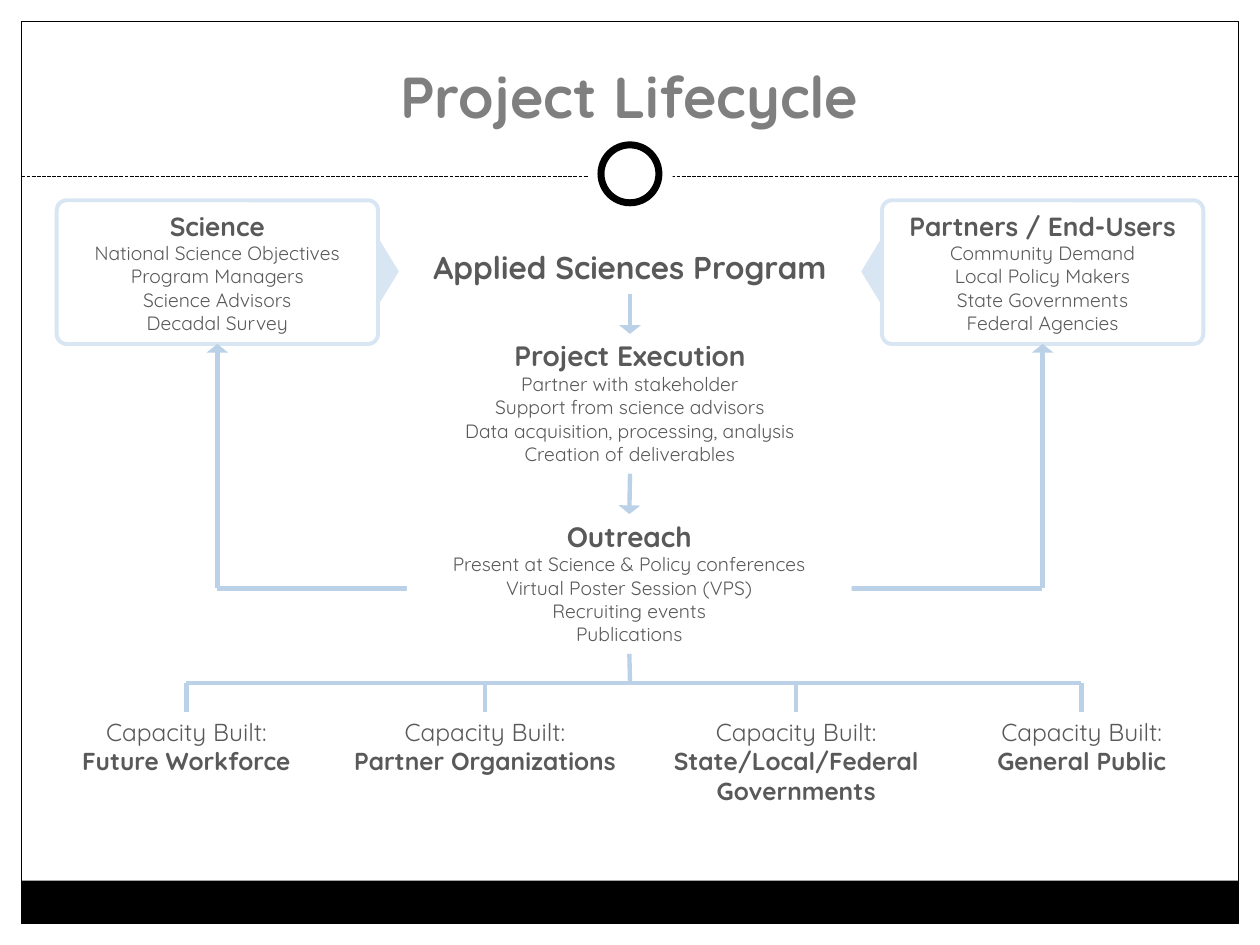
from lxml.etree import SubElement
from pptx import Presentation
from pptx.dml.color import RGBColor
from pptx.enum.dml import MSO_LINE
from pptx.enum.shapes import MSO_CONNECTOR, MSO_SHAPE
from pptx.enum.text import MSO_ANCHOR, MSO_AUTO_SIZE, PP_ALIGN
from pptx.oxml.ns import qn
from pptx.util import Inches, Pt

BLACK = RGBColor(0x00, 0x00, 0x00)
WHITE = RGBColor(0xFF, 0xFF, 0xFF)
TITLE_GREY = RGBColor(0x7F, 0x7F, 0x7F)
TEXT_GREY = RGBColor(0x59, 0x59, 0x59)
LINE_BLUE = RGBColor(0xBA, 0xD1, 0xE8)
PALE_BLUE = RGBColor(0xD8, 0xE5, 0xF2)
FONT = "Quicksand"

prs = Presentation()
prs.slide_width, prs.slide_height = Inches(10), Inches(7.5)
s = prs.slides.add_slide(prs.slide_layouts[5])


def add_shape(kind, x, y, w, h, fill=None, line=None, width=0.75, lines=()):
    """Add a preset shape; lines holds (text, size, bold) for each paragraph."""
    sp = s.shapes.add_shape(kind, Inches(x), Inches(y), Inches(w), Inches(h))
    sp.shadow.inherit = False
    if fill is None:
        sp.fill.background()
    else:
        sp.fill.solid()
        sp.fill.fore_color.rgb = fill
    if line is None:
        sp.line.fill.background()
    else:
        sp.line.color.rgb = line
        sp.line.width = Pt(width)
    if lines:
        tf = sp.text_frame
        tf.word_wrap = True
        tf.auto_size = MSO_AUTO_SIZE.SHAPE_TO_FIT_TEXT
        tf.vertical_anchor = MSO_ANCHOR.MIDDLE if line else MSO_ANCHOR.TOP
        tf.margin_left = tf.margin_right = Inches(0.08)
        tf.margin_top = tf.margin_bottom = Inches(0.04)
        for i, (text, size, bold) in enumerate(lines):
            p = tf.add_paragraph() if i else tf.paragraphs[0]
            p.text = text
            p.alignment = PP_ALIGN.CENTER
            p.font.name, p.font.size, p.font.bold = FONT, Pt(size), bold
            p.font.color.rgb = TEXT_GREY
    return sp


def add_line(x1, y1, x2, y2, color=LINE_BLUE, width=2.5, arrow=False):
    c = s.shapes.add_connector(MSO_CONNECTOR.STRAIGHT, Inches(x1), Inches(y1),
                               Inches(x2), Inches(y2))
    c.line.color.rgb = color
    c.line.width = Pt(width)
    if arrow:
        SubElement(c.line._get_or_add_ln(), qn("a:tailEnd"),
                   type="triangle", w="lg", len="sm")
    SubElement(c._element.spPr, qn("a:effectLst"))
    return c


# Title
title = s.shapes.title
title.left, title.top = Inches(0.33), Inches(0.25)
title.width, title.height = Inches(9.33), Inches(0.83)
tf = title.text_frame
tf.vertical_anchor = MSO_ANCHOR.BOTTOM
p = tf.paragraphs[0]
p.text = "Project Lifecycle"
p.alignment = PP_ALIGN.CENTER
p.font.name, p.font.size, p.font.bold = FONT, Pt(33), True
p.font.color.rgb = TITLE_GREY

# Slide frame, divider and ring
add_shape(MSO_SHAPE.RECTANGLE, 0.17, 6.99, 9.66, 0.34, BLACK)
add_shape(MSO_SHAPE.RECTANGLE, 0.17, 0.17, 9.66, 7.16, line=BLACK)
divider = add_line(0.17, 1.4, 9.83, 1.4, BLACK, 0.75)
divider.line.dash_style = MSO_LINE.SQUARE_DOT
add_shape(MSO_SHAPE.OVAL, 4.67, 1.05, 0.67, 0.67, WHITE)
add_shape(MSO_SHAPE.OVAL, 4.77, 1.15, 0.46, 0.46, WHITE, BLACK, 4)

# Feedback line, passing behind the Outreach box
add_line(1.72, 4.67, 8.27, 4.67)

# Central column, each step leading to the next
steps = [
    (3.27, 1.93, 3.46, 0.4, 18, "Applied Sciences Program", []),
    (3.4, 2.65, 3.2, 1.11, 16, "Project Execution",
     ["Partner with stakeholder", "Support from science advisors",
      "Data acquisition, processing, analysis", "Creation of deliverables"]),
    (3.23, 4.08, 3.53, 1.11, 16, "Outreach",
     ["Present at Science & Policy conferences", "Virtual Poster Session (VPS)",
      "Recruiting events", "Publications"]),
]
previous = None
for x, y, w, h, size, heading, details in steps:
    step = add_shape(MSO_SHAPE.RECTANGLE, x, y, w, h, WHITE,
                     lines=[(heading, size, True)] + [(d, 11, False) for d in details])
    if previous is not None:
        arrow = add_line(5, y - 0.32, 5, y, arrow=True)
        arrow.begin_connect(previous, 2)
        arrow.end_connect(step, 0)
    previous = step

# Side boxes with pointers, fed from the feedback line
sides = [
    (0.45, 2.63, 90, "Science",
     ["National Science Objectives", "Program Managers", "Science Advisors",
      "Decadal Survey"]),
    (7, 6.55, 270, "Partners / End-Users",
     ["Community Demand", "Local Policy Makers", "State Governments",
      "Federal Agencies"]),
]
for x, pointer_x, angle, heading, details in sides:
    pointer = add_shape(MSO_SHAPE.ISOSCELES_TRIANGLE, pointer_x, 2.03, 0.82, 0.25, PALE_BLUE)
    pointer.rotation = angle
    box = add_shape(MSO_SHAPE.ROUNDED_RECTANGLE, x, 1.59, 2.55, 1.14, WHITE, PALE_BLUE, 2.25,
                    [(heading, 15, True)] + [(d, 11, False) for d in details])
    box.adjustments[0] = 0.07
    middle = x + 2.55 / 2
    add_line(middle, 4.67, middle, 2.73, arrow=True).end_connect(box, 2)

# Capacity branches below Outreach
add_line(5, 5.19, 5, 5.42).begin_connect(previous, 2)
add_line(1.48, 5.42, 8.58, 5.42)
capacities = [
    (0.47, 2.02, 0.57, ["Future Workforce"]),
    (2.7, 2.3, 0.57, ["Partner Organizations"]),
    (5.21, 2.22, 0.81, ["State/Local/Federal", "Governments"]),
    (7.64, 1.89, 0.57, ["General Public"]),
]
for x, w, h, names in capacities:
    box = add_shape(MSO_SHAPE.RECTANGLE, x, 5.65, w, h, WHITE,
                    lines=[("Capacity Built:", 14, False)] + [(n, 14, True) for n in names])
    middle = x + w / 2
    add_line(middle, 5.42, middle, 5.65).end_connect(box, 0)

prs.save("out.pptx")
